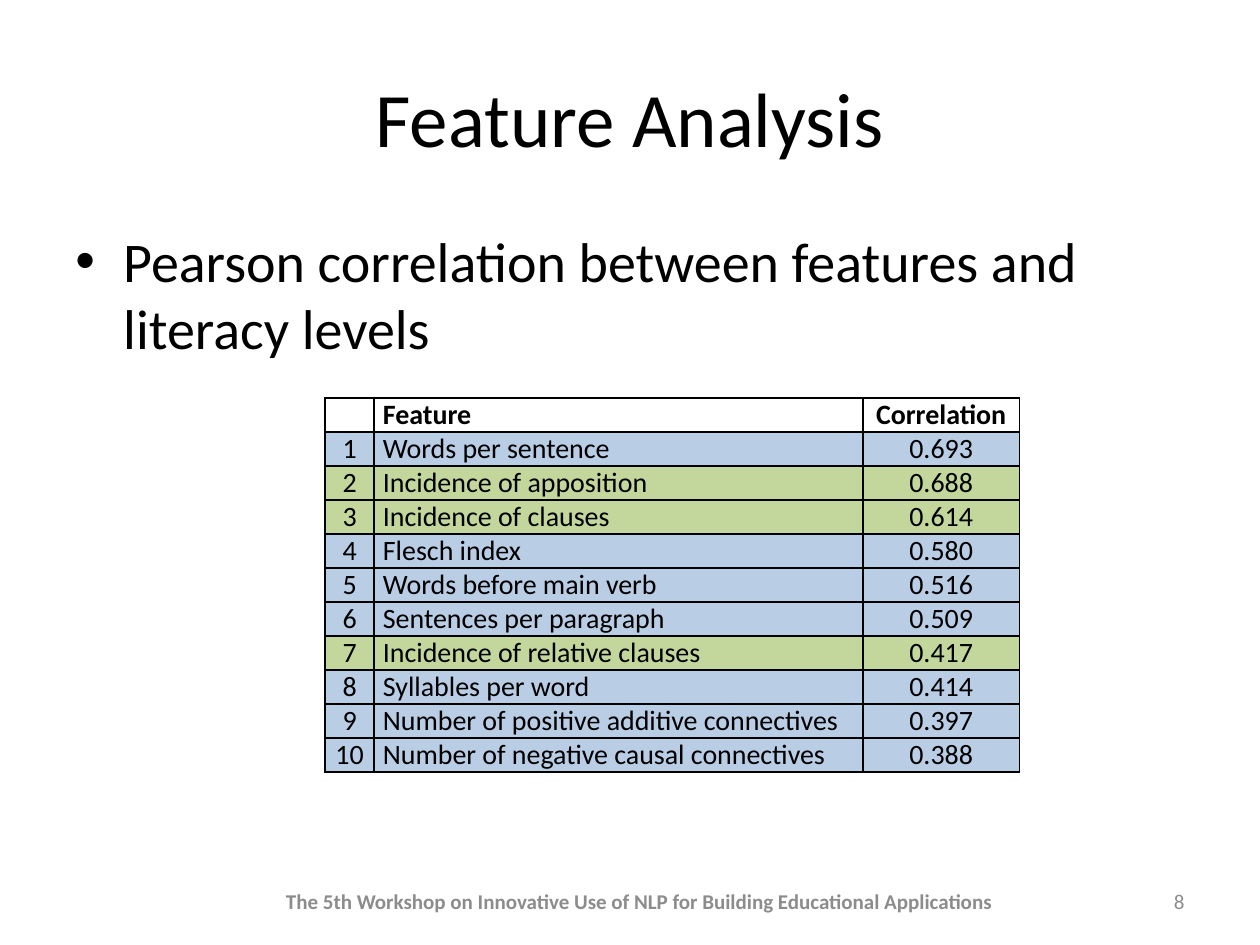
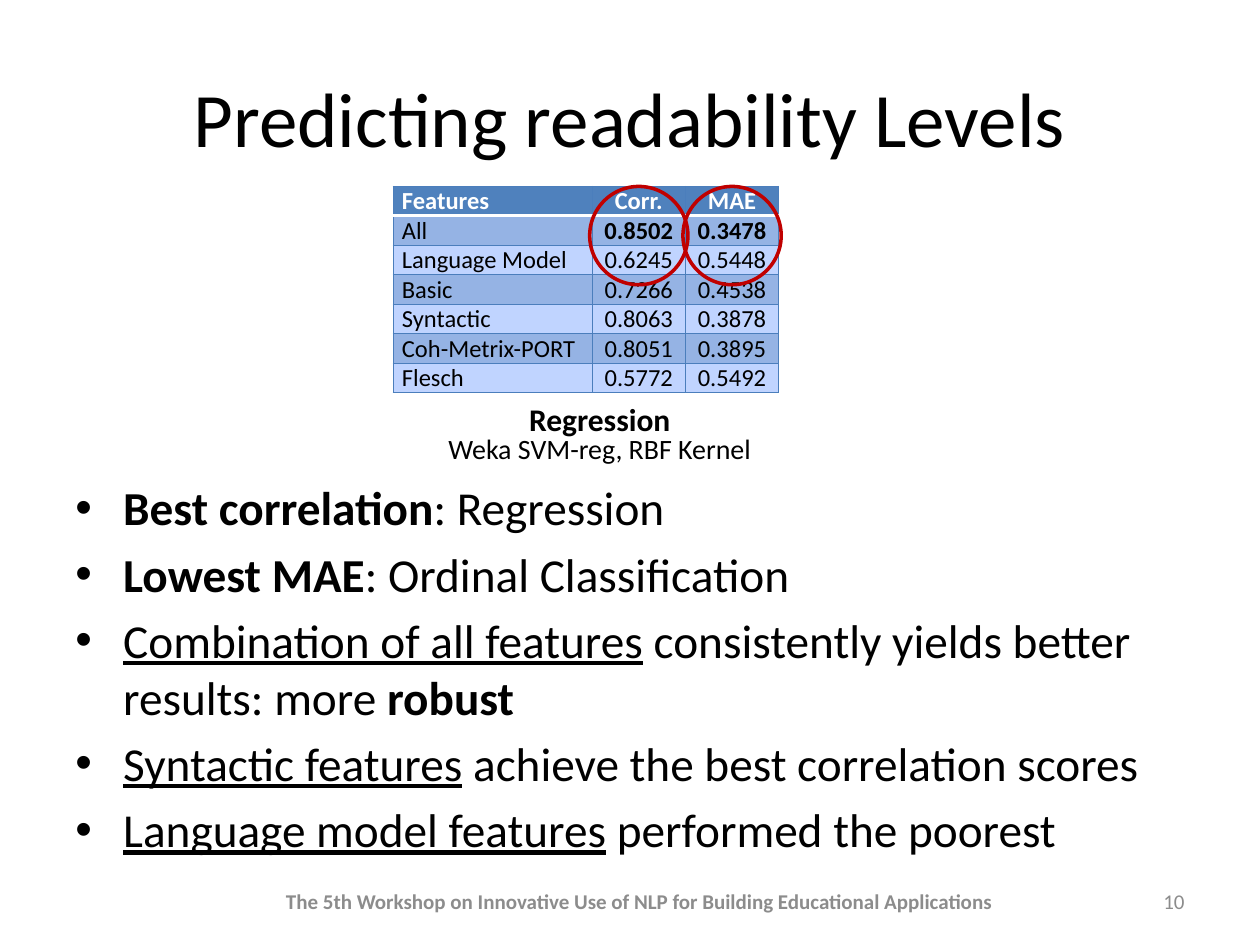
import pptx
import pptx.dml.color
import pptx.enum.shapes
import pptx.enum.text
import pptx.oxml
import pptx.oxml.ns
import pptx.util

Inches, Pt = pptx.util.Inches, pptx.util.Pt
ALIGN = pptx.enum.text.PP_ALIGN
MIDDLE = pptx.enum.text.MSO_ANCHOR.MIDDLE

WIDTH, HEIGHT, MARGIN = 10, 7.5, 0.5
CONTENT_WIDTH = WIDTH - 2 * MARGIN
BODY_BOTTOM = 6.7
FONT = "Calibri"
BLACK, WHITE, GRAY, RED = "000000", "FFFFFF", "8C8C8C", "C00000"
SURFACE, SYNTAX = "B9CDE5", "C3D69B"
HEADER_BLUE, GRID_BLUE, DARK_BAND, LIGHT_BAND = "4F81BD", "4B7EBC", "95B3E4", "C0D4FF"
BOLD, UNDERLINE = {"bold": True}, {"underline": True}

FOOTER = "The 5th Workshop on Innovative Use of NLP for Building Educational Applications"

# A paragraph is a list of (text, format) runs.
ANALYSIS_POINTS = [[("Pearson correlation between features and literacy levels", {})]]
CORRELATION_HEADER = ("", "Feature", "Correlation")
CORRELATIONS = [
    ("Words per sentence", "0.693", SURFACE),
    ("Incidence of apposition", "0.688", SYNTAX),
    ("Incidence of clauses", "0.614", SYNTAX),
    ("Flesch index", "0.580", SURFACE),
    ("Words before main verb", "0.516", SURFACE),
    ("Sentences per paragraph", "0.509", SURFACE),
    ("Incidence of relative clauses", "0.417", SYNTAX),
    ("Syllables per word", "0.414", SURFACE),
    ("Number of positive additive connectives", "0.397", SURFACE),
    ("Number of negative causal connectives", "0.388", SURFACE),
]
REGRESSION_ROWS = [
    ("Features", "Corr.", "MAE"),
    ("All", "0.8502", "0.3478"),
    ("Language Model", "0.6245", "0.5448"),
    ("Basic", "0.7266", "0.4538"),
    ("Syntactic", "0.8063", "0.3878"),
    ("Coh-Metrix-PORT", "0.8051", "0.3895"),
    ("Flesch", "0.5772", "0.5492"),
]
REGRESSION_CAPTION = [
    [("Regression", {"bold": True, "size": Pt(18)})],
    [("Weka SVM-reg, RBF Kernel", {})],
]
PREDICTION_POINTS = [
    [("Best correlation", BOLD), (": Regression", {})],
    [("Lowest MAE", BOLD), (": Ordinal Classification", {})],
    [("Combination of all features", UNDERLINE),
     (" consistently yields better results: more ", {}), ("robust", BOLD)],
    [("Syntactic features", UNDERLINE), (" achieve the best correlation scores", {})],
    [("Language model features", UNDERLINE), (" performed the poorest", {})],
]


def rgb(color):
    return pptx.dml.color.RGBColor.from_string(color)


def set_all(target, values):
    for name, value in values.items():
        setattr(target, name, value)


def write_runs(paragraph, runs, size, color=BLACK):
    for text, style in runs:
        run = paragraph.add_run()
        run.text = text
        set_all(run.font, {"name": FONT, "size": Pt(size), **style})
        run.font.color.rgb = rgb(color)


def add_text(slide, box, paragraphs, size, color=BLACK, frame_format=None, **paragraph_format):
    shape = slide.shapes.add_textbox(*map(Inches, box))
    frame = shape.text_frame
    set_all(frame, {"word_wrap": True, **(frame_format or {})})
    for index, runs in enumerate(paragraphs):
        paragraph = frame.paragraphs[0] if index == 0 else frame.add_paragraph()
        set_all(paragraph, paragraph_format)
        write_runs(paragraph, runs, size, color)
    return frame


def add_bullets(slide, top, points, size):
    box = (MARGIN, top, CONTENT_WIDTH, BODY_BOTTOM - top)
    frame = add_text(slide, box, points, size, space_before=Pt(size * 0.2))
    for paragraph in frame.paragraphs:
        properties = paragraph._p.get_or_add_pPr()
        properties.set("marL", str(Inches(0.38)))
        properties.set("indent", str(-Inches(0.38)))
        for tag, attribute, value in (("buFont", "typeface", "Arial"), ("buChar", "char", "•")):
            bullet = properties.makeelement(pptx.oxml.ns.qn(f"a:{tag}"), {attribute: value})
            properties.append(bullet)


def add_border(cell, side, color, points):
    cell._tc.get_or_add_tcPr().append(pptx.oxml.parse_xml(
        f'<a:ln{side} {pptx.oxml.ns.nsdecls("a")} w="{Pt(points)}">'
        f'<a:solidFill><a:srgbClr val="{color}"/></a:solidFill></a:ln{side}>'))


def add_grid(slide, corner, columns, row_height, rows, fills, size, look, border):
    """Add a table; look(row, column) gives alignment, bold and text colour,
    border(row, side) gives line colour and width."""
    frame = slide.shapes.add_table(len(rows), len(columns), *map(
        Inches, (*corner, sum(columns), row_height * len(rows))))
    table = frame.table
    set_all(table, {"first_row": False, "horz_banding": False})
    for column, width in zip(table.columns, columns):
        column.width = Inches(width)
    for r, values in enumerate(rows):
        table.rows[r].height = Inches(row_height)
        for c, text in enumerate(values):
            cell = table.cell(r, c)
            set_all(cell, {"margin_left": Inches(0.07), "margin_right": Inches(0.07),
                           "margin_top": 0, "margin_bottom": 0})
            for side in "LRTB":
                add_border(cell, side, *border(r, side))
            cell.fill.solid()
            cell.fill.fore_color.rgb = rgb(fills[r])
            paragraph = cell.text_frame.paragraphs[0]
            alignment, bold, color = look(r, c)
            paragraph.alignment = alignment
            if text:
                write_runs(paragraph, [(text, {"bold": bold})], size, color)
            else:
                paragraph._p.get_or_add_endParaRPr().set("sz", str(size * 100))


def add_slide(presentation, title, number):
    """Add a blank slide with the shared title, footer and slide number."""
    slide = presentation.slides.add_slide(presentation.slide_layouts[6])
    anchored = {"vertical_anchor": MIDDLE}
    add_text(slide, (MARGIN, 0.3, CONTENT_WIDTH, 1.25), [[(title, {})]], 44,
             frame_format=anchored, alignment=ALIGN.CENTER)
    add_text(slide, (2.03, 6.95, 6.09, 0.4), [[(FOOTER, BOLD)]], 12, GRAY,
             anchored, alignment=ALIGN.CENTER)
    add_text(slide, (7.17, 6.95, 2.33, 0.4), [[(str(number), {})]], 12, GRAY,
             anchored, alignment=ALIGN.RIGHT)
    return slide


def build_feature_analysis(presentation):
    slide = add_slide(presentation, "Feature Analysis", 8)
    add_bullets(slide, 1.75, ANALYSIS_POINTS, 32)
    rows = [CORRELATION_HEADER] + [
        (str(rank), feature, value)
        for rank, (feature, value, _) in enumerate(CORRELATIONS, 1)]
    fills = [WHITE] + [fill for *_, fill in CORRELATIONS]
    add_grid(slide, (2.58, 3.16), (0.39, 3.88, 1.24), 0.27, rows, fills, 16,
             lambda r, c: (ALIGN.LEFT if c == 1 else ALIGN.CENTER, r == 0, BLACK),
             lambda r, side: (BLACK, 1))


def regression_look(row, column):
    alignment = ALIGN.CENTER if column else ALIGN.LEFT
    best = row == 1 and column > 0
    return alignment, row == 0 or best, BLACK if row else WHITE


def regression_border(row, side):
    under_header = (row, side) in ((0, "B"), (1, "T"))
    return (WHITE, 2) if under_header else (GRID_BLUE, 0.75)


def build_prediction(presentation):
    slide = add_slide(presentation, "Predicting readability Levels", 10)
    left, top, columns = 3.12, 1.48, (1.58, 0.74, 0.74)
    fills = [HEADER_BLUE] + [DARK_BAND, LIGHT_BAND] * 3
    add_grid(slide, (left, top), columns, 0.23, REGRESSION_ROWS, fills, 14,
             regression_look, regression_border)
    add_text(slide, (3.39, 3.2, 2.74, 0.55), REGRESSION_CAPTION, 16,
             frame_format={"word_wrap": False},
             alignment=ALIGN.CENTER, line_spacing=Pt(16))
    diameter = 0.78
    for index in (1, 2):
        center = left + sum(columns[:index]) + columns[index] / 2
        ring = slide.shapes.add_shape(
            pptx.enum.shapes.MSO_SHAPE.OVAL,
            *map(Inches, (center - diameter / 2, top, diameter, diameter)))
        ring.shadow.inherit = False
        ring.fill.background()
        ring.line.color.rgb = rgb(RED)
        ring.line.width = Pt(2)
    add_bullets(slide, 3.75, PREDICTION_POINTS, 27)


def main():
    presentation = pptx.Presentation()
    set_all(presentation, {"slide_width": Inches(WIDTH), "slide_height": Inches(HEIGHT)})
    build_feature_analysis(presentation)
    build_prediction(presentation)
    presentation.save("out.pptx")


if __name__ == "__main__":
    main()
